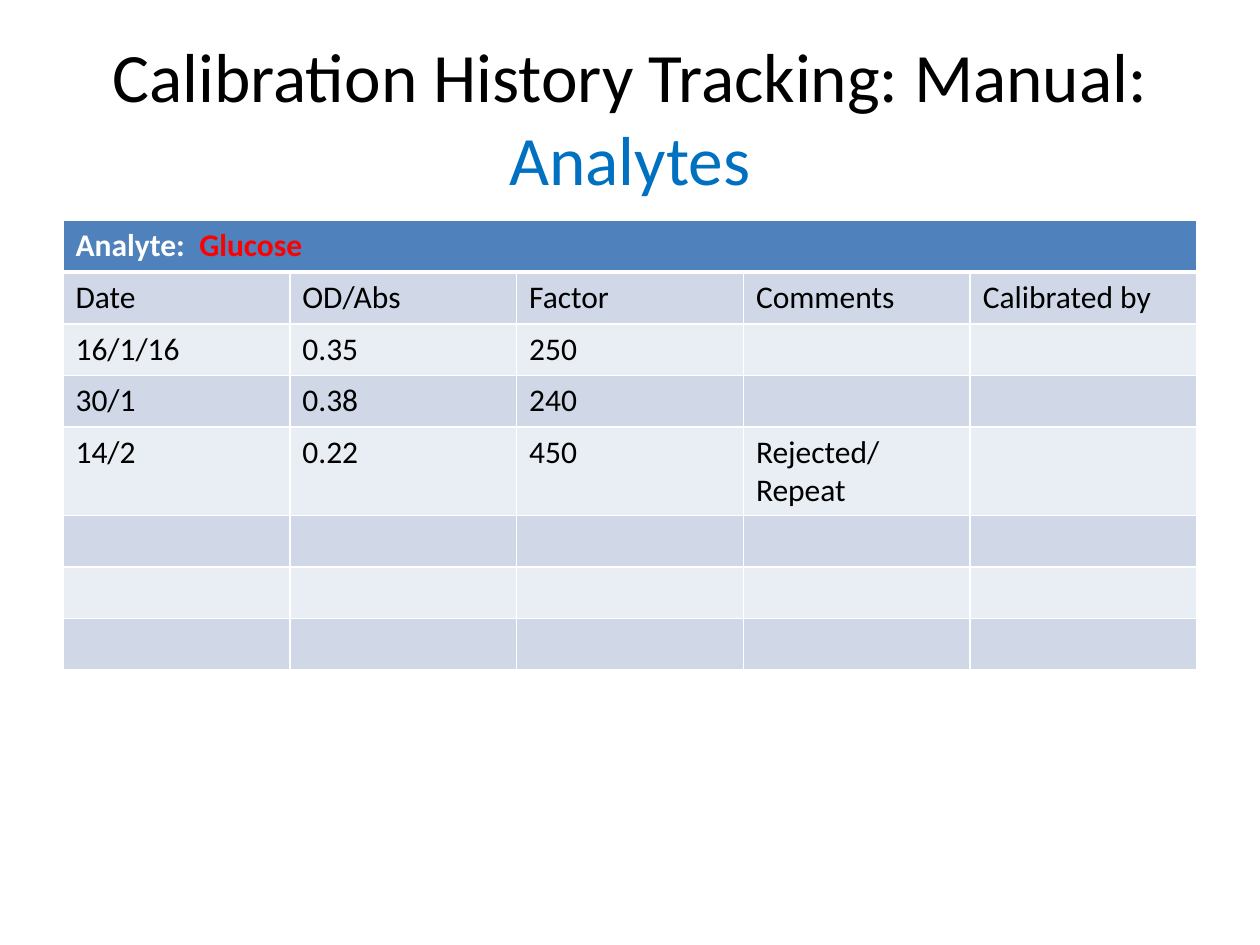
from lxml.etree import SubElement
from pptx import Presentation
from pptx.dml.color import RGBColor
from pptx.enum.text import MSO_ANCHOR, PP_ALIGN
from pptx.oxml.ns import qn
from pptx.util import Inches, Pt

FONT = "Calibri"
BLACK = RGBColor(0x00, 0x00, 0x00)
WHITE = RGBColor(0xFF, 0xFF, 0xFF)
BLUE = RGBColor(0x00, 0x70, 0xC0)
RED = RGBColor(0xFF, 0x00, 0x00)
HEADER_FILL = RGBColor(0x4F, 0x81, 0xBD)
BAND_FILLS = [RGBColor(0xD0, 0xD8, 0xE8), RGBColor(0xE9, 0xED, 0xF4)]

COLUMNS = 5
ROW_HEIGHT = Inches(0.41)
CALIBRATIONS = [
    ["Date", "OD/Abs", "Factor", "Comments", "Calibrated by"],
    ["16/1/16", "0.35", "250", "", ""],
    ["30/1", "0.38", "240", "", ""],
    ["14/2", "0.22", "450", "Rejected/ Repeat", ""],
    [""] * COLUMNS,
    [""] * COLUMNS,
    [""] * COLUMNS,
]


def add_run(para, text, size, color, bold=False):
    span = para.add_run()
    span.text = text
    span.font.name = FONT
    span.font.size = Pt(size)
    span.font.bold = bold
    span.font.color.rgb = color


def add_title(page):
    box = page.shapes.add_textbox(Inches(0.5), Inches(0.3), Inches(9), Inches(1.25))
    frame = box.text_frame
    frame.word_wrap = True
    frame.vertical_anchor = MSO_ANCHOR.MIDDLE
    para = frame.paragraphs[0]
    para.alignment = PP_ALIGN.CENTER
    add_run(para, "Calibration History Tracking: Manual: ", 39.6, BLACK)
    add_run(para, "Analytes", 39.6, BLUE)


def style_cell(cell, fill, top=1, bottom=1):
    """Give a cell its fill and white borders; top and bottom are in points."""
    properties = cell._tc.get_or_add_tcPr()
    for side, width in (("L", 1), ("R", 1), ("T", top), ("B", bottom)):
        line = SubElement(properties, qn(f"a:ln{side}"), w=str(Pt(width)))
        solid = SubElement(line, qn("a:solidFill"))
        SubElement(solid, qn("a:srgbClr"), val=str(WHITE))
    cell.fill.solid()
    cell.fill.fore_color.rgb = fill


def add_calibration_table(page):
    rows = len(CALIBRATIONS) + 1
    table = page.shapes.add_table(
        rows, COLUMNS, Inches(0.5), Inches(1.75), Inches(9), ROW_HEIGHT * rows
    ).table

    for column in range(COLUMNS):
        style_cell(table.cell(0, column), HEADER_FILL, bottom=3)
    header = table.cell(0, 0)
    header.merge(table.cell(0, COLUMNS - 1))
    para = header.text_frame.paragraphs[0]
    add_run(para, "Analyte:  ", 18, WHITE, bold=True)
    add_run(para, "Glucose", 18, RED, bold=True)

    for row, values in enumerate(CALIBRATIONS, start=1):
        for column, value in enumerate(values):
            cell = table.cell(row, column)
            style_cell(cell, BAND_FILLS[(row - 1) % 2], top=3 if row == 1 else 1)
            if value:
                add_run(cell.text_frame.paragraphs[0], value, 18, BLACK)


def main():
    deck = Presentation()
    deck.slide_width = Inches(10)
    deck.slide_height = Inches(7.5)
    page = deck.slides.add_slide(deck.slide_layouts[6])
    add_title(page)
    add_calibration_table(page)
    deck.save("out.pptx")


if __name__ == "__main__":
    main()
